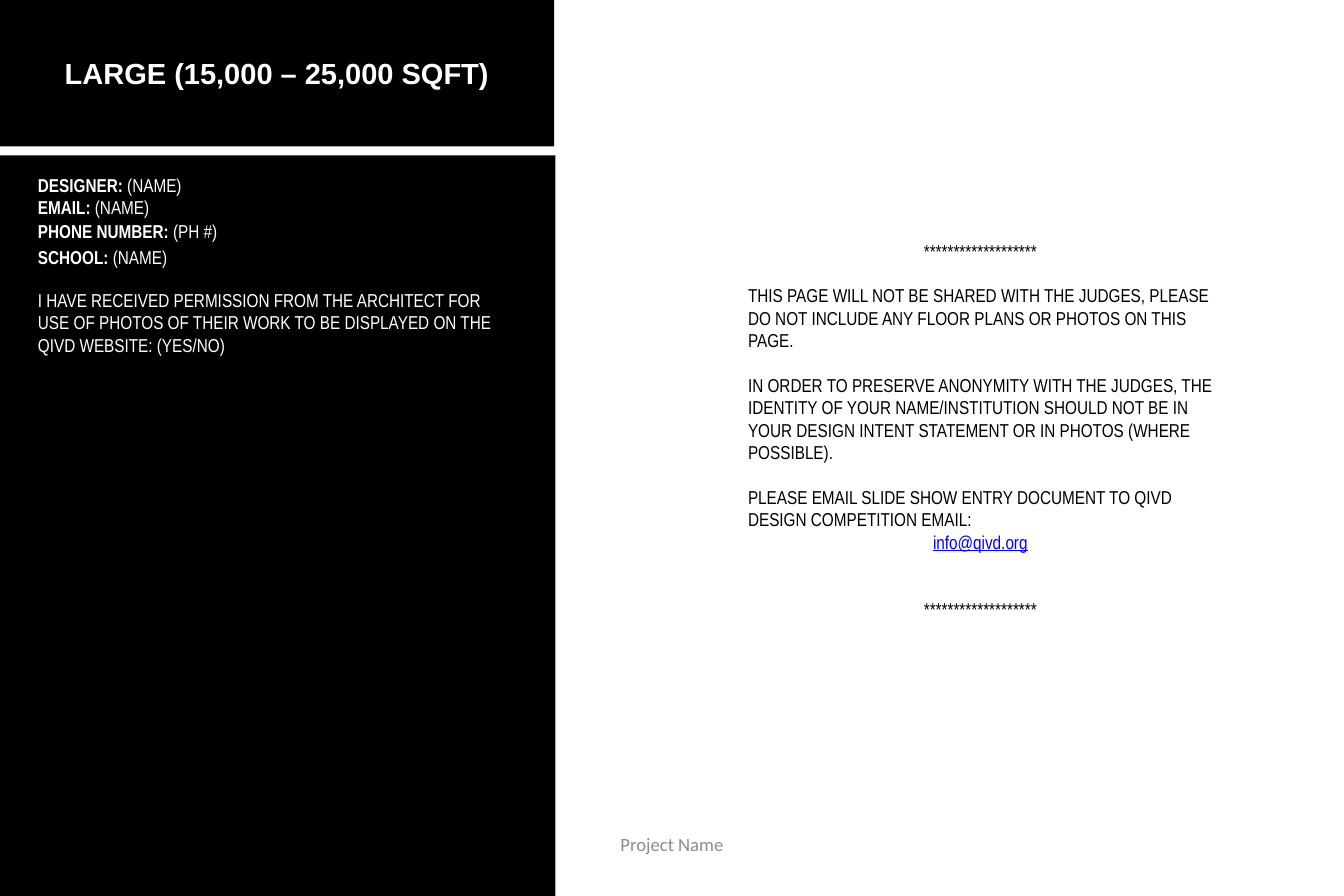
from pptx import Presentation
from pptx.dml.color import RGBColor
from pptx.enum.shapes import MSO_SHAPE as Shape
from pptx.enum.text import PP_ALIGN as Align
from pptx.util import Inches, Pt

COLORS = {"black": "000000", "white": "FFFFFF", "gray": "8C8C8C", "link": "0000FF"}
NARROW = "Arial Narrow"
LINE = 21.5  # height of one 18 pt line, in points
STARS = "*" * 19

CONTACTS = [
    ("DESIGNER: ", "(NAME)", 2.28),
    ("EMAIL: ", "(NAME)", 2.58),
    ("PHONE NUMBER: ", "(PH #)", 2.89),
    ("SCHOOL: ", "(NAME)", 3.25),
]
PERMISSION = (
    "I HAVE RECEIVED PERMISSION FROM THE ARCHITECT FOR USE OF PHOTOS OF THEIR "
    "WORK TO BE DISPLAYED ON THE QIVD WEBSITE: (YES/NO)"
)
# Text, alignment, colour, lines of space before
NOTICE = [
    (STARS, Align.CENTER, "black", 0),
    ("THIS PAGE WILL NOT BE SHARED WITH THE JUDGES, PLEASE DO NOT INCLUDE ANY "
     "FLOOR PLANS OR PHOTOS ON THIS PAGE.", Align.LEFT, "black", 1),
    ("IN ORDER TO PRESERVE ANONYMITY WITH THE JUDGES, THE IDENTITY OF YOUR "
     "NAME/INSTITUTION SHOULD NOT BE IN YOUR DESIGN INTENT STATEMENT OR IN "
     "PHOTOS (WHERE POSSIBLE).", Align.LEFT, "black", 1),
    ("PLEASE EMAIL SLIDE SHOW ENTRY DOCUMENT TO QIVD DESIGN COMPETITION EMAIL:",
     Align.LEFT, "black", 1),
    ("info@qivd.org", Align.CENTER, "link", 0),
    (STARS, Align.CENTER, "black", 2),
]


def add_panel(slide, left, top, width, height):
    shape = slide.shapes.add_shape(
        Shape.RECTANGLE, Inches(left), Inches(top), Inches(width), Inches(height))
    shape.shadow.inherit = False
    shape.fill.solid()
    shape.fill.fore_color.rgb = RGBColor.from_string(COLORS["black"])
    shape.line.fill.background()


def add_frame(slide, left, top, width, height):
    box = slide.shapes.add_textbox(
        Inches(left), Inches(top), Inches(width), Inches(height))
    box.text_frame.word_wrap = True
    return box.text_frame


def style(paragraph, color, align=Align.LEFT, font=NARROW, size=18):
    paragraph.alignment = align
    paragraph.font.name = font
    paragraph.font.size = Pt(size)
    paragraph.font.color.rgb = RGBColor.from_string(COLORS[color])


def add_text(slide, text, box, color, **options):
    frame = add_frame(slide, *box)
    paragraph = frame.paragraphs[0]
    paragraph.add_run().text = text
    style(paragraph, color, **options)
    return frame


def add_contact(slide, label, value, top):
    frame = add_text(slide, label, (0.41, top, 6.42, 0.4), "white")
    paragraph = frame.paragraphs[0]
    paragraph.runs[0].font.bold = True
    paragraph.add_run().text = value


def add_notice(slide):
    frame = add_frame(slide, 9.92, 3.16, 6.42, 5.55)
    for index, (text, align, color, gap) in enumerate(NOTICE):
        paragraph = frame.add_paragraph() if index else frame.paragraphs[0]
        paragraph.add_run().text = text
        style(paragraph, color, align)
        paragraph.space_before = Pt(gap * LINE)
        paragraph.font.underline = color == "link"


def main():
    presentation = Presentation()
    presentation.slide_width = Inches(18)
    presentation.slide_height = Inches(12)
    slide = presentation.slides.add_slide(presentation.slide_layouts[6])

    # Black title and details panels
    add_panel(slide, 0, 0, 7.42, 1.96)
    add_panel(slide, 0, 2.08, 7.44, 9.92)

    # Category title
    title = add_text(slide, "LARGE (15,000 – 25,000 SQFT)", (0.28, 0.69, 6.85, 0.57),
                     "white", align=Align.CENTER, font="Arial", size=28)
    title.paragraphs[0].font.bold = True

    # Entrant details
    for label, value, top in CONTACTS:
        add_contact(slide, label, value, top)
    add_text(slide, PERMISSION, (0.41, 3.82, 6.42, 1.01), "white")

    # Submission notice
    add_notice(slide)

    # Footer
    footer = add_text(slide, "Project Name", (6.12, 11.16, 5.76, 0.6), "gray",
                      align=Align.CENTER, font="Calibri")
    footer.margin_left = footer.margin_right = 0
    footer.margin_top = footer.margin_bottom = 0

    presentation.save("out.pptx")


if __name__ == "__main__":
    main()
